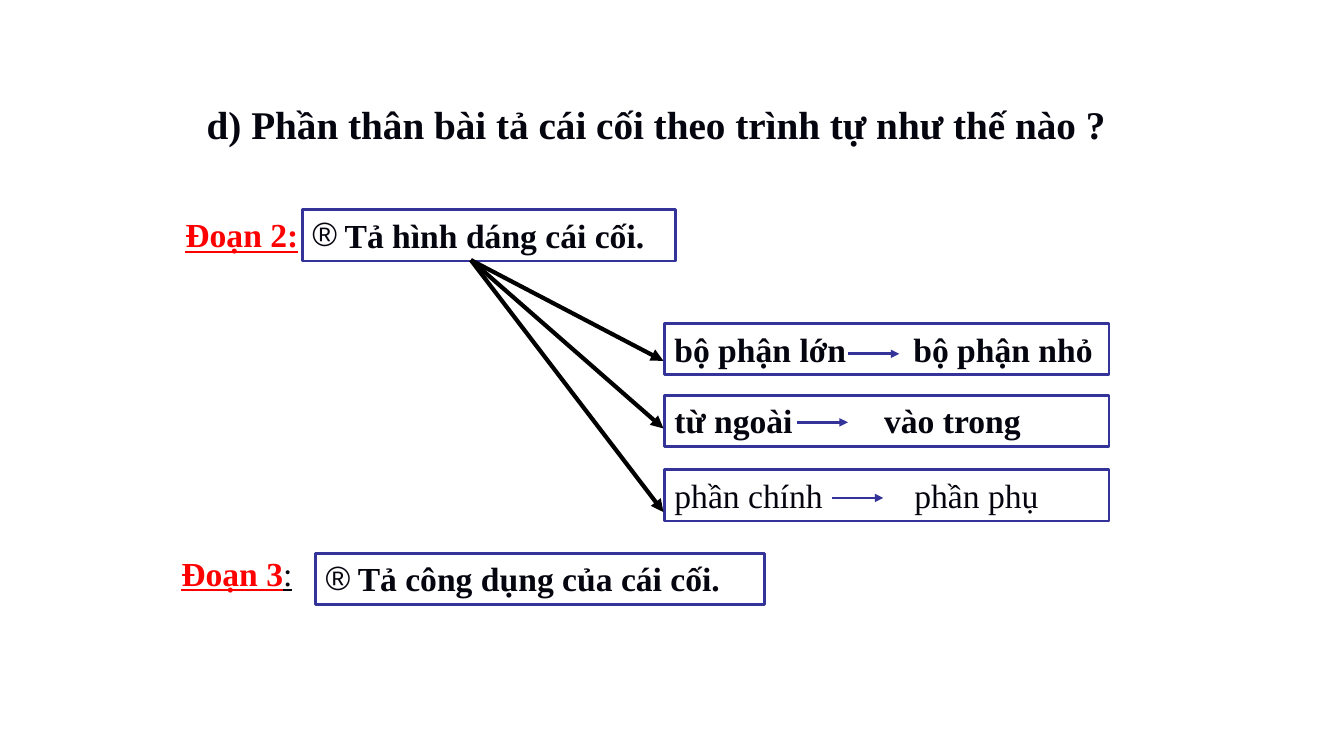
"""Builds the slide on the order in which the mortar is described."""
from pptx import Presentation
from pptx.dml.color import RGBColor
from pptx.enum.shapes import MSO_CONNECTOR as CONN, MSO_SHAPE as SHAPE
from pptx.enum.text import MSO_ANCHOR as ANCHOR, MSO_AUTO_SIZE as AUTO, PP_ALIGN as ALIGN
from pptx.oxml.ns import qn
from pptx.util import Inches, Pt
from lxml.etree import SubElement

FONT = "Times New Roman"
COLORS = {"ink": "05050F", "red": "FF0000", "blue": "333399", "black": "000000", "white": "FFFFFF"}


def rgb(name):
    return RGBColor.from_string(COLORS[name])


def add_run(p, text, size=24, color="ink", bold=True, underline=False):
    r = p.add_run()
    r.text = text
    r.font.name, r.font.size = FONT, Pt(size)
    r.font.bold, r.font.underline = bold, underline
    r.font.color.rgb = rgb(color)


def set_title(s, text):
    sp = s.shapes.title
    sp.left, sp.top, sp.width, sp.height = Inches(1.95), Inches(0.98), Inches(9.5), Inches(0.5)
    tf = sp.text_frame
    tf.auto_size, tf.word_wrap, tf.vertical_anchor = AUTO.NONE, True, ANCHOR.MIDDLE
    p = tf.paragraphs[0]
    p.alignment = ALIGN.LEFT
    add_run(p, text, 28)


def add_label(s, x, y, runs):
    sp = s.shapes.add_textbox(Inches(x), Inches(y), Inches(1.52), Inches(0.36))
    tf = sp.text_frame
    tf.word_wrap, tf.vertical_anchor = True, ANCHOR.BOTTOM
    p = tf.paragraphs[0]
    p.line_spacing = 0.9
    for text, color, bold in runs:
        add_run(p, text, color=color, bold=bold, underline=True)


def add_box(s, x, y, w, text, bold=True):
    sp = s.shapes.add_shape(SHAPE.RECTANGLE, Inches(x), Inches(y), Inches(w), Inches(0.51))
    sp.shadow.inherit = False
    sp.fill.solid()
    sp.fill.fore_color.rgb = rgb("white")
    sp.line.color.rgb = rgb("blue")
    sp.line.width = Pt(2)
    tf = sp.text_frame
    tf.word_wrap, tf.vertical_anchor = True, ANCHOR.TOP
    p = tf.paragraphs[0]
    p.alignment = ALIGN.LEFT
    add_run(p, text, bold=bold)
    return p


def add_bullet(p):
    pPr = p._p.get_or_add_pPr()
    indent = Inches(0.32)
    pPr.set("marL", str(indent))
    pPr.set("indent", str(-indent))
    SubElement(pPr, qn("a:buFont"), typeface="Arial")
    SubElement(pPr, qn("a:buChar"), char="®")


def add_tab(p, pos):
    tabs = SubElement(p._p.get_or_add_pPr(), qn("a:tabLst"))
    SubElement(tabs, qn("a:tab"), pos=str(Inches(pos)), algn="l")


def add_arrow(s, x1, y1, x2, y2, color, width):
    cxn = s.shapes.add_connector(CONN.STRAIGHT, Inches(x1), Inches(y1), Inches(x2), Inches(y2))
    cxn.line.color.rgb = rgb(color)
    cxn.line.width = Pt(width)
    SubElement(cxn.line._get_or_add_ln(), qn("a:tailEnd"), type="triangle")
    SubElement(cxn._element.spPr, qn("a:effectLst"))


def add_order(s, y, first, second, tab, arrow_x, arrow_y, bold=True):
    p = add_box(s, 6.59, y, 4.41, f"{first}\t{second}", bold)
    add_tab(p, tab)
    add_arrow(s, arrow_x, arrow_y, arrow_x + 0.51, arrow_y, "blue", 2)


def main():
    prs = Presentation()
    prs.slide_width, prs.slide_height = Inches(13.33), Inches(7.5)
    s = prs.slides.add_slide(prs.slide_layouts[5])
    set_title(s, "d) Phần thân bài tả cái cối theo trình tự như thế nào ?")

    add_bullet(add_box(s, 3, 2.08, 3.7, "Tả hình dáng cái cối."))
    add_bullet(add_box(s, 3.13, 5.49, 4.45, "Tả công dụng của cái cối."))
    add_label(s, 1.74, 2.22, [("Đoạn 2:", "red", True)])
    add_label(s, 1.7, 5.58, [("Đoạn 3", "red", True), (":", "ink", False)])

    add_order(s, 3.21, "bộ phận lớn", "bộ phận nhỏ", 2.37, 8.41, 3.51)
    add_order(s, 3.92, "từ ngoài", "vào trong", 2.08, 7.9, 4.19)
    add_order(s, 4.66, "phần chính", "phần phụ", 2.38, 8.25, 4.94, bold=False)
    for y in (3.58, 4.25, 5.08):
        add_arrow(s, 4.67, 2.58, 6.58, y, "black", 3)

    prs.save("out.pptx")


if __name__ == "__main__":
    main()
